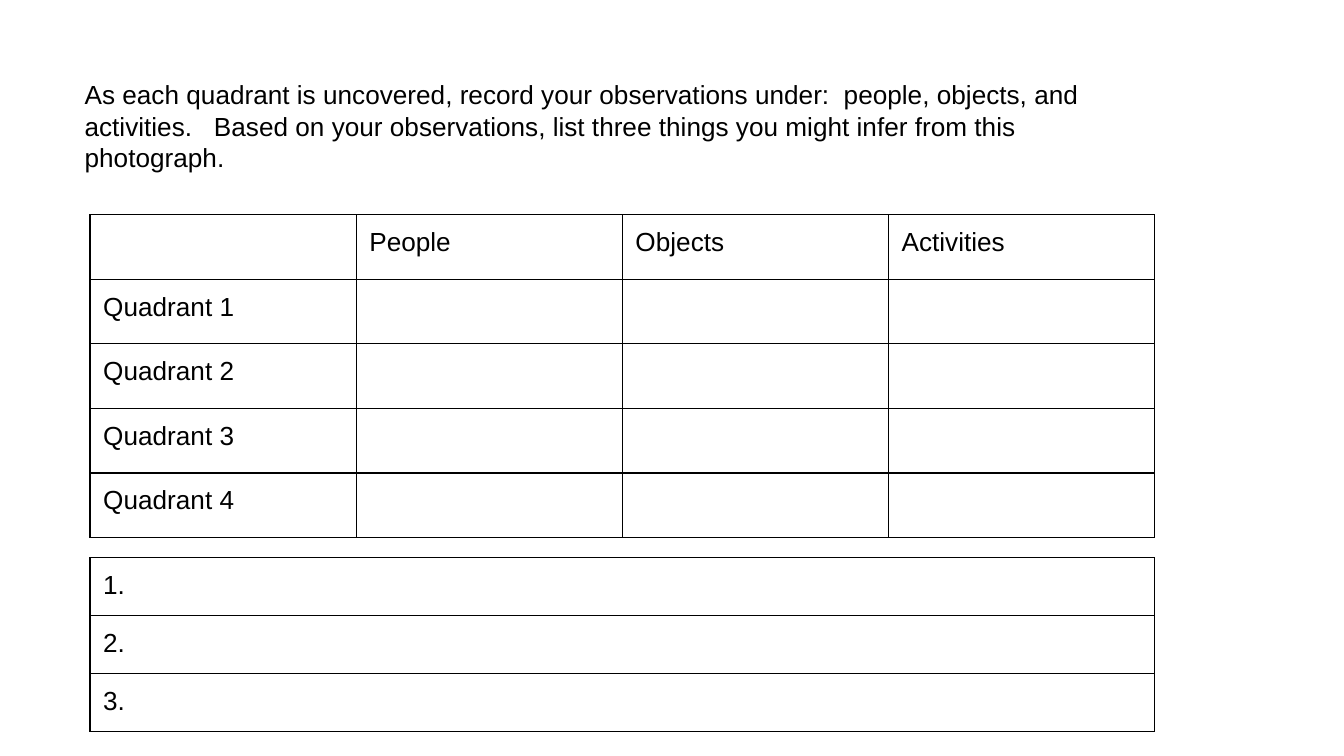
from lxml.etree import SubElement
from pptx import Presentation
from pptx.dml.color import RGBColor
from pptx.oxml.ns import qn
from pptx.util import Cm, Pt

COLORS = {"ink": "000000", "rule": "000000"}
FONT, SIZE = "Arial", Pt(14)
INSET = Cm(0.25)
RULE_WIDTH = Pt(0.75)

INSTRUCTIONS = (
    "As each quadrant is uncovered, record your observations under:  people, "
    "objects, and activities.   Based on your observations, list three things "
    "you might infer from this photograph."
)
HEADINGS = ["", "People", "Objects", "Activities"]
OBSERVATIONS = [HEADINGS] + [[f"Quadrant {n}", "", "", ""] for n in range(1, 5)]
INFERENCES = [[f"{n}."] for n in range(1, 4)]


def write(frame, text):
    """Put text in a frame and format its runs."""
    frame.word_wrap = True
    frame.text = text
    paragraph = frame.paragraphs[0]
    for run in paragraph.runs:
        run.font.name, run.font.size = FONT, SIZE
        run.font.color.rgb = RGBColor.from_string(COLORS["ink"])
    if not text:
        # Keeps blank answer cells at the height of a text line
        end = SubElement(paragraph._p, qn("a:endParaRPr"), sz=str(int(SIZE.pt * 100)))
        SubElement(end, qn("a:latin"), typeface=FONT)


def set_insets(holder):
    holder.margin_left = holder.margin_right = INSET
    holder.margin_top = holder.margin_bottom = INSET


def rule_cell(cell):
    """Draw all four borders, which must precede the fill in the XML."""
    properties = cell._tc.get_or_add_tcPr()
    for side in ("lnL", "lnR", "lnT", "lnB"):
        line = SubElement(properties, qn(f"a:{side}"), w=str(RULE_WIDTH))
        fill = SubElement(line, qn("a:solidFill"))
        SubElement(fill, qn("a:srgbClr"), val=COLORS["rule"])
    cell.fill.background()


def add_instructions(slide, left, top, width, height):
    instructions = slide.shapes.add_textbox(left, top, width, height).text_frame
    set_insets(instructions)
    write(instructions, INSTRUCTIONS)


def add_worksheet(slide, entries, left, top, width, height):
    """Ruled table whose rows and columns share the box evenly."""
    row_count, column_count = len(entries), len(entries[0])
    worksheet = slide.shapes.add_table(
        row_count, column_count, left, top, width, height
    ).table
    worksheet.first_row = worksheet.horz_banding = False
    for row, row_entries in enumerate(entries):
        for column, entry in enumerate(row_entries):
            cell = worksheet.cell(row, column)
            set_insets(cell)
            rule_cell(cell)
            write(cell.text_frame, entry)


def main():
    presentation = Presentation()
    presentation.slide_width, presentation.slide_height = Cm(25.4), Cm(14.29)
    slide = presentation.slides.add_slide(presentation.slide_layouts[6])

    # Task
    add_instructions(slide, Cm(1.35), Cm(1.24), Cm(20.83), Cm(2.51))

    # Observation grid and inference list, on the same left edge and width
    left, width = Cm(1.7), Cm(20.12)
    add_worksheet(slide, OBSERVATIONS, left, Cm(4.06), width, Cm(6.1))
    add_worksheet(slide, INFERENCES, left, Cm(10.54), width, Cm(3.18))

    presentation.save("out.pptx")


if __name__ == "__main__":
    main()
